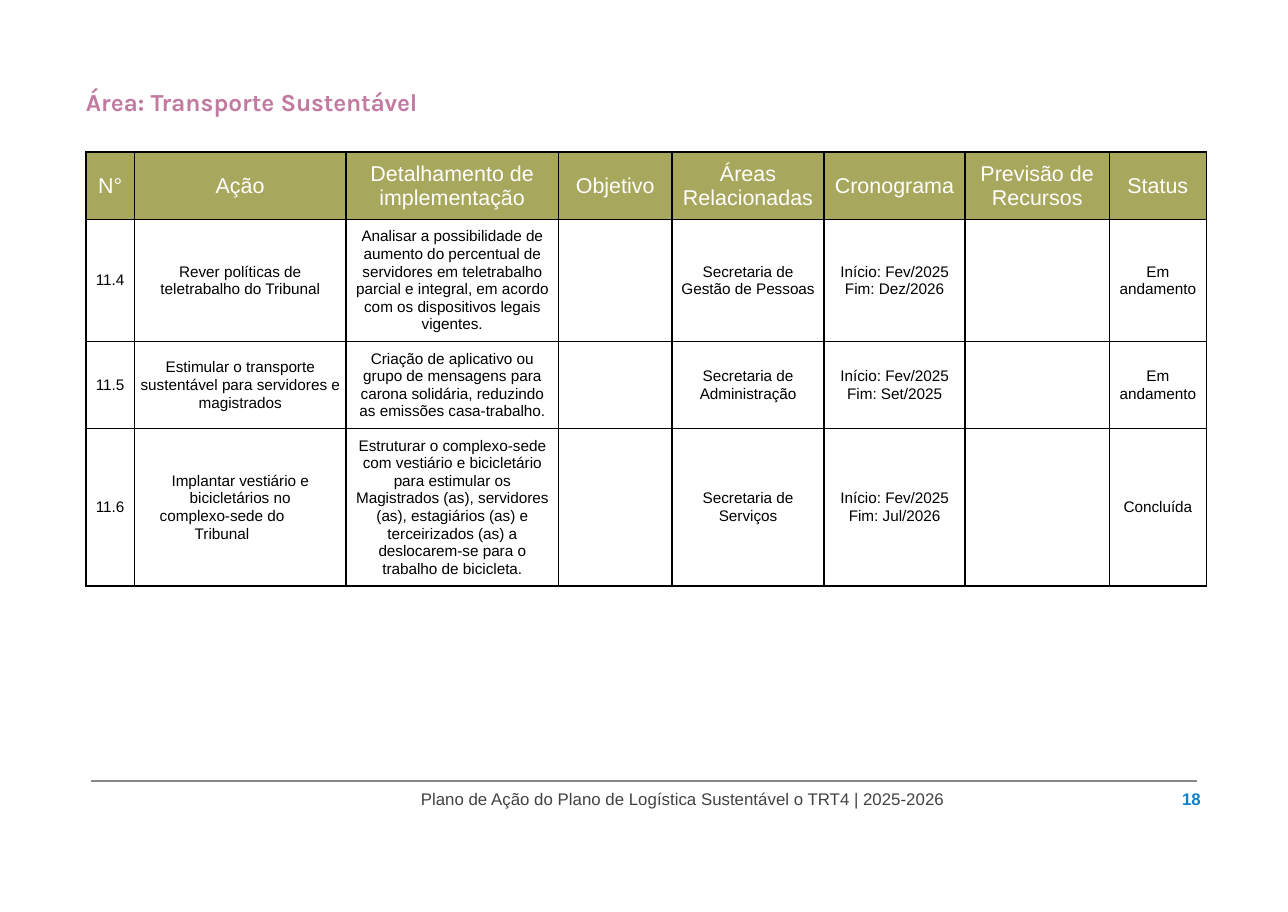
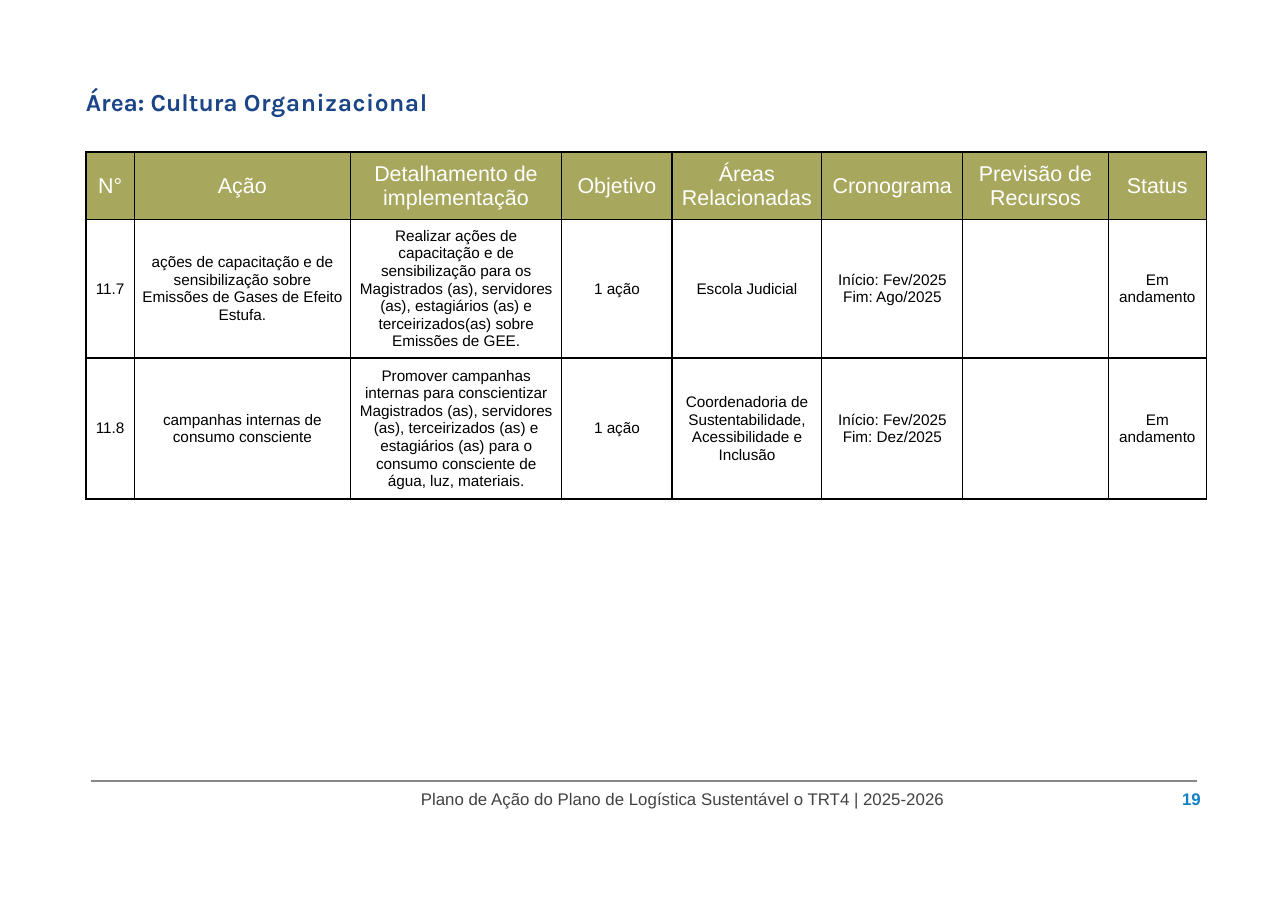
from dataclasses import dataclass
from typing import Any

from lxml import etree
from pptx import Presentation
from pptx.dml.color import RGBColor
from pptx.enum.shapes import MSO_CONNECTOR
from pptx.enum.text import MSO_ANCHOR, MSO_AUTO_SIZE, PP_ALIGN
from pptx.oxml.ns import qn
from pptx.util import Emu, Pt

LEFT, CENTER, RIGHT = PP_ALIGN.LEFT, PP_ALIGN.CENTER, PP_ALIGN.RIGHT
TOP, MIDDLE = MSO_ANCHOR.TOP, MSO_ANCHOR.MIDDLE
NO_FIT = MSO_AUTO_SIZE.NONE
STRAIGHT = MSO_CONNECTOR.STRAIGHT

PX_PER_INCH = 100
EMU_PER_PX = 914400 // PX_PER_INCH
TITLE_ONLY = 5

BLACK, WHITE, OLIVE = "000000", "FFFFFF", "A7A75D"
RULE_GREY, FOOTER_GREY, PAGE_BLUE = "878787", "424242", "1181C7"

HEADINGS = (
    "N°", "Ação", "Detalhamento de implementação", "Objetivo",
    "Áreas Relacionadas", "Cronograma", "Previsão de Recursos", "Status",
)
FOOTER = "Plano de Ação do Plano de Logística Sustentável o TRT4 | 2025-2026"
CELL_MARGIN = 5
DETAIL_COLUMN, DETAIL_MARGIN = 2, 7
SECOND_PARAGRAPH_INDENT = 33


@dataclass(frozen=True)
class TextStyle:
    size: float
    color: str
    line: float | None = None
    align: Any = CENTER
    bold: bool = False
    font: str = "Arial"


@dataclass(frozen=True)
class Action:
    number: str
    action: str
    detail: str
    goal: str
    area: str
    start: str
    end: str
    status: str
    height: int

    def cells(self) -> tuple[str, ...]:
        schedule = f"Início: {self.start}\vFim: {self.end}"
        return (self.number, self.action, self.detail, self.goal,
                self.area, schedule, "", self.status)


@dataclass(frozen=True)
class AreaPage:
    number: int
    title: tuple[str, str]
    title_color: str
    title_spacing: int
    columns: tuple[int, ...]
    actions: tuple[Action, ...]


HEADING_STYLE = TextStyle(14, WHITE, 16.1)
BODY_STYLE = TextStyle(10, BLACK, 11.5)
FOOTER_STYLE = TextStyle(11, FOOTER_GREY, 13.2, LEFT)
NUMBER_STYLE = TextStyle(11, PAGE_BLUE, 13.2, RIGHT, True)
HEADING_HEIGHT = 61

PAGES = (
    AreaPage(
        18, ("Área: Transporte ", "Sustentável"), "C27BA0", -10,
        (44, 192, 193, 103, 138, 128, 131, 88),
        (
            Action(
                "11.4", "Rever políticas de teletrabalho do Tribunal",
                "Analisar a possibilidade de aumento do percentual de servidores em "
                "teletrabalho parcial e integral, em acordo com os dispositivos legais vigentes.",
                "", "Secretaria de Gestão de Pessoas",
                "Fev/2025", "Dez/2026", "Em andamento", 111,
            ),
            Action(
                "11.5", "Estimular o transporte sustentável para servidores e magistrados",
                "Criação de aplicativo ou grupo de mensagens para carona solidária, "
                "reduzindo as emissões casa-trabalho.",
                "", "Secretaria de Administração",
                "Fev/2025", "Set/2025", "Em andamento", 79,
            ),
            Action(
                "11.6", "Implantar vestiário e bicicletários no\ncomplexo-sede do Tribunal",
                "Estruturar o complexo-sede com vestiário e bicicletário para estimular os "
                "Magistrados (as), servidores (as), estagiários (as) e terceirizados (as) a "
                "deslocarem-se para o trabalho de bicicleta.",
                "", "Secretaria de Serviços",
                "Fev/2025", "Jul/2026", "Concluída", 143,
            ),
        ),
    ),
    AreaPage(
        19, ("Área: Cultura ", "Organizacional"), "1B4586", 40,
        (44, 196, 192, 100, 136, 128, 132, 89),
        (
            Action(
                "11.7",
                "ações de capacitação e de sensibilização sobre "
                "Emissões de Gases de Efeito Estufa.",
                "Realizar ações de capacitação e de sensibilização para os Magistrados (as), "
                "servidores (as), estagiários (as) e terceirizados(as) sobre Emissões de GEE.",
                "1 ação", "Escola Judicial",
                "Fev/2025", "Ago/2025", "Em andamento", 126,
            ),
            Action(
                "11.8", "campanhas internas de consumo consciente",
                "Promover campanhas internas para conscientizar Magistrados (as), "
                "servidores (as), terceirizados (as) e estagiários (as) para o consumo "
                "consciente de água, luz, materiais.",
                "1 ação", "Coordenadoria de Sustentabilidade, Acessibilidade e Inclusão",
                "Fev/2025", "Dez/2025", "Em andamento", 128,
            ),
        ),
    ),
)


def px(length: int) -> Emu:
    return Emu(length * EMU_PER_PX)


def color(code: str) -> RGBColor:
    return RGBColor.from_string(code)


def apply(target: Any, values: dict[str, Any]) -> None:
    for name, value in values.items():
        setattr(target, name, value)


def format_paragraph(para: Any, style: TextStyle) -> None:
    apply(para, {"alignment": style.align, "space_before": Pt(0)})
    if style.line:
        para.line_spacing = Pt(style.line)
    for span in para.runs:
        apply(span.font, {"name": style.font, "size": Pt(style.size), "bold": style.bold})
        span.font.color.rgb = color(style.color)


def add_title(page: Any, content: AreaPage) -> None:
    title = page.shapes.title
    apply(title, {"left": px(77), "top": px(77), "width": px(345), "height": px(29)})
    frame = title.text_frame
    apply(frame, {
        "auto_size": NO_FIT, "word_wrap": True, "vertical_anchor": TOP,
        "margin_left": px(1), "margin_top": px(2), "margin_right": 0, "margin_bottom": 0,
    })
    para = frame.paragraphs[0]
    for text in content.title:
        span = para.add_run()
        span.text = text
    format_paragraph(para, TextStyle(16, content.title_color, None, LEFT, True, "Karla"))
    span._r.get_or_add_rPr().set("spc", str(content.title_spacing))


def add_borders(cell: Any) -> None:
    properties = cell._tc.get_or_add_tcPr()
    for side in ("lnL", "lnR", "lnT", "lnB"):
        border = etree.SubElement(properties, qn(f"a:{side}"), w=str(Pt(1)))
        fill = etree.SubElement(border, qn("a:solidFill"))
        etree.SubElement(fill, qn("a:srgbClr"), val=BLACK)


def fill_cell(cell: Any, text: str, style: TextStyle, fill: str | None, margin: int) -> None:
    add_borders(cell)
    if fill:
        cell.fill.solid()
        cell.fill.fore_color.rgb = color(fill)
    else:
        cell.fill.background()
    apply(cell, {
        "vertical_anchor": MIDDLE, "margin_left": px(margin), "margin_right": px(margin),
        "margin_top": px(2), "margin_bottom": px(2),
    })
    cell.text_frame.text = text
    for index, para in enumerate(cell.text_frame.paragraphs):
        format_paragraph(para, style)
        if index:
            para._p.get_or_add_pPr().set("marR", str(px(SECOND_PARAGRAPH_INDENT)))


def add_action_table(page: Any, content: AreaPage) -> None:
    rows = [HEADINGS] + [action.cells() for action in content.actions]
    heights = [HEADING_HEIGHT] + [action.height for action in content.actions]
    table = page.shapes.add_table(
        len(rows), len(HEADINGS), px(78), px(138),
        px(sum(content.columns)), px(sum(heights)),
    ).table
    apply(table, {"first_row": False, "horz_banding": False})
    for column, width in zip(table.columns, content.columns):
        column.width = px(width)
    for row_index, texts in enumerate(rows):
        table.rows[row_index].height = px(heights[row_index])
        style, fill = (BODY_STYLE, None) if row_index else (HEADING_STYLE, OLIVE)
        for column_index, text in enumerate(texts):
            margin = DETAIL_MARGIN if column_index == DETAIL_COLUMN else CELL_MARGIN
            fill_cell(table.cell(row_index, column_index), text, style, fill, margin)


def add_label(page: Any, left: int, width: int, text: str, style: TextStyle) -> None:
    box = page.shapes.add_textbox(px(left), px(716), px(width), px(20))
    frame = box.text_frame
    apply(frame, {
        "word_wrap": True, "auto_size": NO_FIT, "vertical_anchor": TOP,
        "margin_left": px(1), "margin_top": 0, "margin_right": 0, "margin_bottom": 0,
    })
    frame.text = text
    format_paragraph(frame.paragraphs[0], style)


def add_footer(page: Any, number: int) -> None:
    rule = page.shapes.add_connector(STRAIGHT, px(83), px(709), px(1086), px(709))
    rule.line.color.rgb = color(RULE_GREY)
    rule.line.width = Pt(1)
    etree.SubElement(rule._element.spPr, qn("a:effectLst"))
    add_label(page, 381, 486, FOOTER, FOOTER_STYLE)
    add_label(page, 1066, 24, str(number), NUMBER_STYLE)


def main() -> None:
    deck = Presentation()
    apply(deck, {"slide_width": px(1169), "slide_height": px(828)})
    for content in PAGES:
        page = deck.slides.add_slide(deck.slide_layouts[TITLE_ONLY])
        add_title(page, content)
        add_action_table(page, content)
        add_footer(page, content.number)
    deck.save("out.pptx")


if __name__ == "__main__":
    main()
